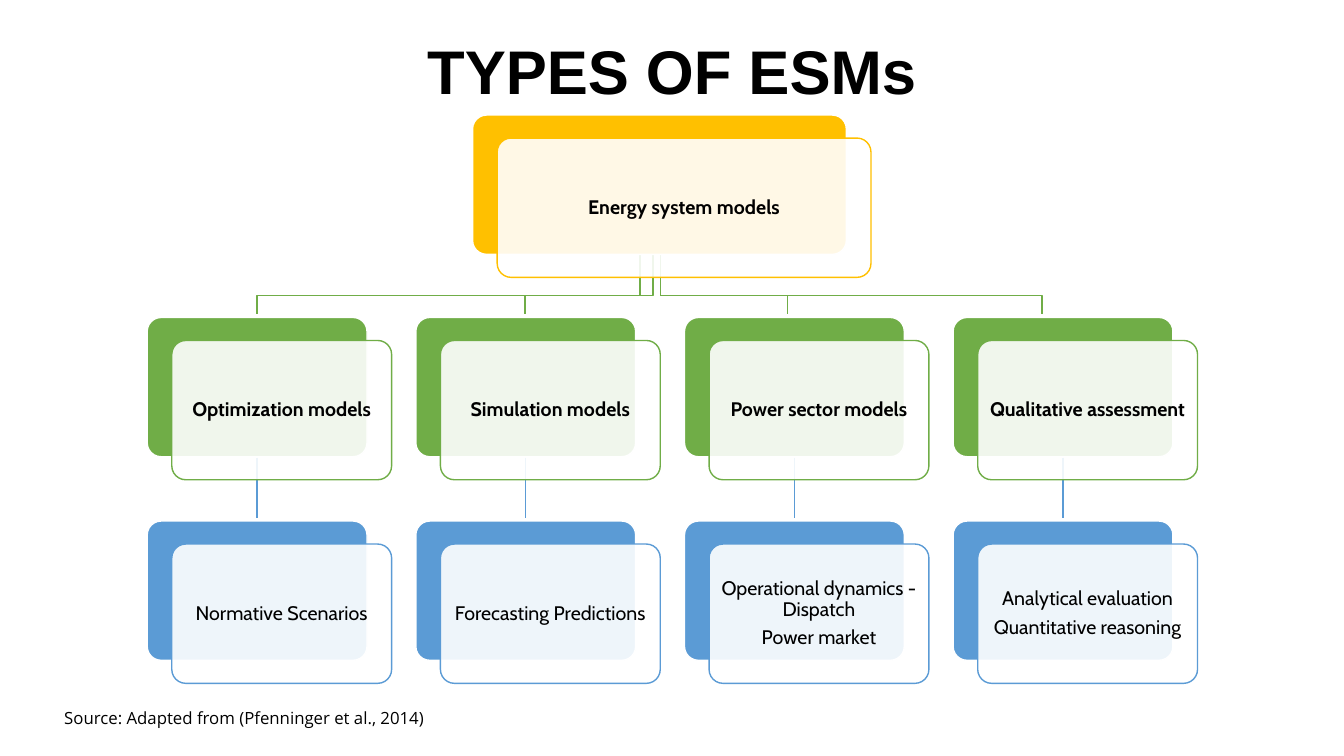
from lxml.etree import SubElement
from pptx import Presentation
from pptx.dml.color import RGBColor
from pptx.enum.shapes import MSO_CONNECTOR as Connector, MSO_SHAPE as Preset
from pptx.enum.text import MSO_ANCHOR as Anchor, PP_ALIGN as Align
from pptx.oxml.ns import qn
from pptx.util import Cm, Pt

COLORS = {"root": "FFC000", "family": "70AD47", "detail": "5B9BD5",
          "paper": "FFFFFF", "ink": "000000"}

# Lengths in cm
ROOT_LEFT, ROOT_TOP, ROOT_WIDTH = 11.91, 2.9, 9.42
FIRST_LEFT, PITCH, CARD_WIDTH, CARD_HEIGHT = 3.71, 6.77, 5.54, 3.51
FAMILY_TOP, DETAIL_TOP = 8.0, 13.13
SHIFT_X, SHIFT_Y = 0.62, 0.58
BRANCH_START, BRANCH_BEND, BRANCH_END = 6.4, 7.44, 7.92
STEM_START, STEM_END = 11.53, 13.06

# Family, its details, and where its branch leaves the root and arrives
FAMILIES = [
    ("Optimization models", ["Normative Scenarios"], 16.13, 6.48),
    ("Simulation models", ["Forecasting Predictions"], 16.46, 13.23),
    ("Power sector models", ["Operational dynamics - Dispatch", "Power market"], 16.64, 19.84),
    ("Qualitative assessment", ["Analytical evaluation", "Quantitative reasoning"], 16.64, 26.26),
]


class ModelTree:
    def __init__(self, slide):
        self.shapes = slide.shapes

    def color(self, name):
        return RGBColor.from_string(COLORS[name])

    def outline(self, shape, color):
        shape.line.color.rgb = self.color(color)
        shape.line.width = Pt(1)

    def style_text(self, paragraph, size, font, bold=False):
        paragraph.font.size = Pt(size)
        paragraph.font.name = font
        paragraph.font.bold = bold
        paragraph.font.color.rgb = self.color("ink")

    def stem(self, x, top, bottom, color):
        line = self.shapes.add_connector(Connector.STRAIGHT, Cm(x), Cm(top), Cm(x), Cm(bottom))
        self.outline(line, color)
        SubElement(line.element.spPr, qn("a:effectLst"))

    def branch(self, start_x, end_x, color):
        builder = self.shapes.build_freeform(Cm(start_x), Cm(BRANCH_START))
        corners = [(start_x, BRANCH_BEND), (end_x, BRANCH_BEND), (end_x, BRANCH_END)]
        builder.add_line_segments([(Cm(x), Cm(y)) for x, y in corners], close=False)
        elbow = builder.convert_to_shape()
        elbow.fill.background()
        elbow.shadow.inherit = False
        self.outline(elbow, color)

    def panel(self, left, top, width, fill, line):
        panel = self.shapes.add_shape(Preset.ROUNDED_RECTANGLE, Cm(left), Cm(top),
                                      Cm(width), Cm(CARD_HEIGHT))
        panel.adjustments[0] = 0.1
        panel.shadow.inherit = False
        panel.fill.solid()
        panel.fill.fore_color.rgb = self.color(fill)
        self.outline(panel, line)
        return panel

    def card(self, left, top, width, color, lines, bold=True):
        """Coloured panel with a translucent, labelled panel shifted over it."""
        self.panel(left, top, width, color, "paper")
        front = self.panel(left + SHIFT_X, top + SHIFT_Y, width, "paper", color)
        fill_color = front.element.spPr.find(qn("a:solidFill"))[0]
        SubElement(fill_color, qn("a:alpha"), val="90000")

        frame = front.text_frame
        frame.word_wrap = True
        frame.vertical_anchor = Anchor.MIDDLE
        frame.margin_left = frame.margin_right = Cm(0.16)
        frame.margin_top = frame.margin_bottom = Cm(0.16)
        frame.text = "\n".join(lines)
        for paragraph in frame.paragraphs:
            paragraph.alignment = Align.CENTER
            paragraph.line_spacing = 0.9
            paragraph.space_after = Pt(5)
            self.style_text(paragraph, 14, "Cabin", bold)

    def caption(self, text, left, top, width, height, size, font, bold=False, align=Align.LEFT):
        frame = self.shapes.add_textbox(Cm(left), Cm(top), Cm(width), Cm(height)).text_frame
        frame.word_wrap = True
        frame.text = text
        frame.paragraphs[0].alignment = align
        self.style_text(frame.paragraphs[0], size, font, bold)


def main():
    deck = Presentation()
    deck.slide_width, deck.slide_height = Cm(33.87), Cm(19.05)
    tree = ModelTree(deck.slides.add_slide(deck.slide_layouts[6]))

    lefts = [FIRST_LEFT + PITCH * column for column in range(len(FAMILIES))]
    for left, (_, _, start_x, end_x) in zip(lefts, FAMILIES):
        tree.stem(left + CARD_WIDTH / 2, STEM_START, STEM_END, "detail")
        tree.branch(start_x, end_x, "family")

    tree.card(ROOT_LEFT, ROOT_TOP, ROOT_WIDTH, "root", ["Energy system models"])
    for left, (family, details, _, _) in zip(lefts, FAMILIES):
        tree.card(left, FAMILY_TOP, CARD_WIDTH, "family", [family])
        tree.card(left, DETAIL_TOP, CARD_WIDTH, "detail", details, bold=False)

    tree.caption("Source: Adapted from (Pfenninger et al., 2014)",
                 1.37, 17.7, 16.94, 0.76, 12, "Open Sans")
    tree.caption("TYPES OF ESMs", 3.35, 0.7, 27.18, 1.63, 44, "Arial",
                 bold=True, align=Align.CENTER)
    deck.save("out.pptx")


if __name__ == "__main__":
    main()
